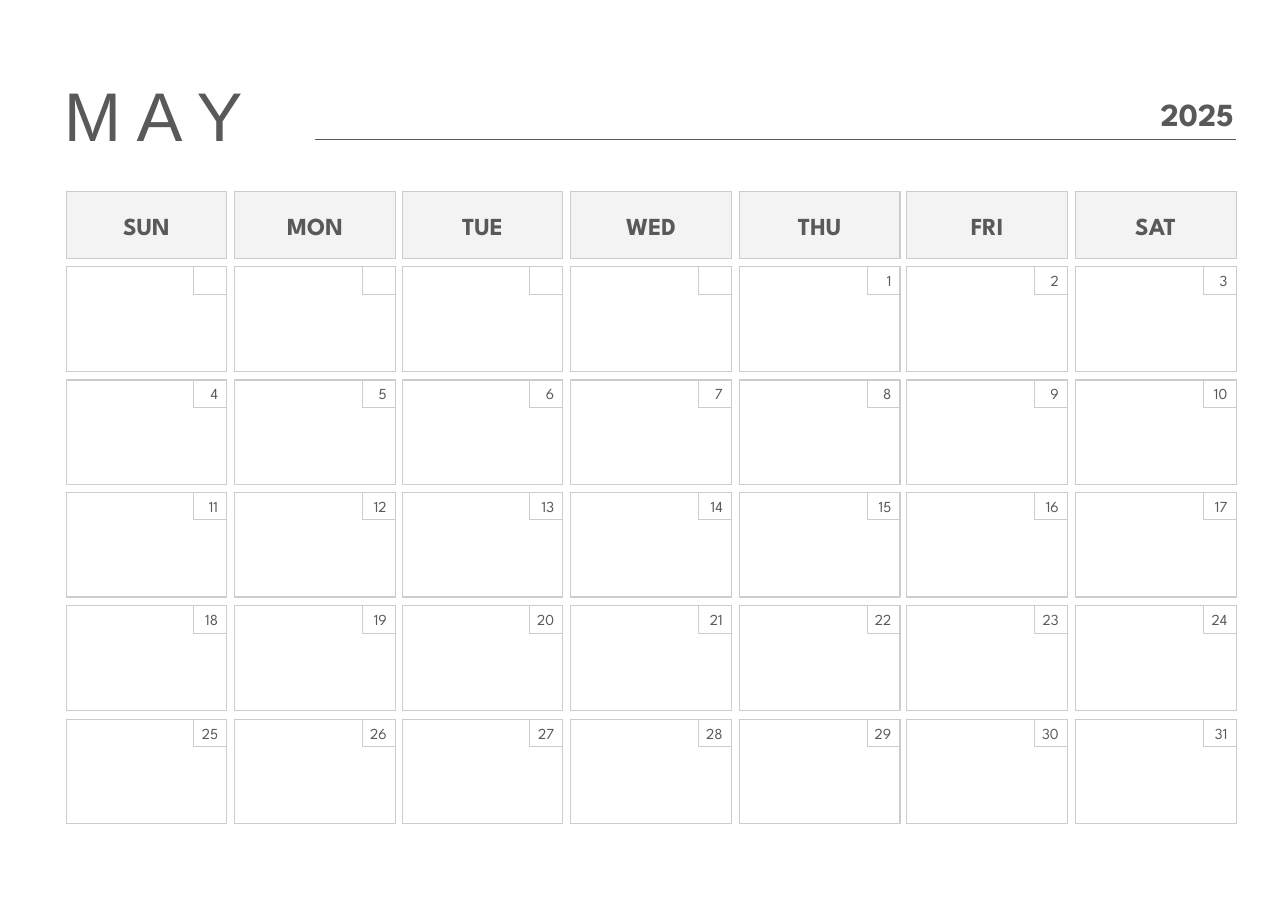
"""Build a one-page calendar for May 2025."""
from lxml.etree import SubElement
from pptx import Presentation
from pptx.dml.color import RGBColor
from pptx.enum.shapes import MSO_CONNECTOR as Link, MSO_SHAPE as Kind
from pptx.enum.text import MSO_ANCHOR as Anchor, MSO_AUTO_SIZE as Fit, PP_ALIGN as Align
from pptx.oxml.ns import qn
from pptx.util import Pt

PX = 9144
INK, EDGE, HEAD, PAPER = "595959", "CCCCCC", "F3F3F3", "FFFFFF"


def tint(code):
    return RGBColor.from_string(code)


def box(home, text, x, y, w, h, kind=Kind.RECTANGLE, fill=None, line=EDGE,
        size=10, bold=False, font="League Spartan", align=Align.RIGHT,
        anchor=Anchor.MIDDLE, pad=(0, 0, 0, 0), grow=False):
    item = home.add_shape(kind, x * PX, y * PX, w * PX, h * PX)
    item.shadow.inherit = False
    if fill:
        item.fill.solid()
        item.fill.fore_color.rgb = tint(fill)
    else:
        item.fill.background()
    if line:
        item.line.color.rgb = tint(line)
        item.line.width = Pt(0.75)
    else:
        item.line.fill.background()
    if not text:
        return
    frame = item.text_frame
    frame.word_wrap = True
    frame.auto_size = Fit.SHAPE_TO_FIT_TEXT if grow else Fit.NONE
    frame.vertical_anchor = anchor
    frame.margin_left, frame.margin_top, frame.margin_right, frame.margin_bottom = [
        side * PX for side in pad]
    para = frame.paragraphs[0]
    para.alignment = align
    run = para.add_run()
    run.text = text
    run.font.name = font
    run.font.size = Pt(size)
    run.font.bold = bold
    run.font.color.rgb = tint(INK)


deck = Presentation()
deck.slide_width, deck.slide_height = 1169 * PX, 827 * PX
slide = deck.slides.add_slide(deck.slide_layouts[6])
shapes = slide.shapes

box(shapes, "M A Y", 58, 66, 234, 76, line=None, size=45, font="Arial",
    align=Align.LEFT, anchor=Anchor.TOP, grow=True)
box(shapes, "2025", 1000, 79, 122, 48, kind=Kind.ROUNDED_RECTANGLE, line=None,
    size=21, bold=True)

WIDE, TALL = 146, 95
TAB_W, TAB_H = 30, 25
cols = [60 + round(916 * col / 6) for col in range(7)]
rows = [242 + round(102.7 * row) for row in range(5)]
grid = shapes.add_group_shape().shapes
tabs = shapes.add_group_shape().shapes

for x, name in zip(cols, "SUN MON TUE WED THU FRI SAT".split()):
    box(grid, name, x, 174, WIDE, 61, fill=HEAD, size=16, bold=True,
        align=Align.CENTER, pad=(10, 10, 10, 10))

START = 4
for row, y in enumerate(rows):
    for col, x in enumerate(cols):
        day = row * 7 + col - START + 1
        box(grid, "", x, y, WIDE, TALL, fill=PAPER)
        box(tabs, str(day) if day > 0 else "", x + WIDE - TAB_W, y, TAB_W, TAB_H,
            pad=(0, 4, 8, 4), grow=True)

rule = shapes.add_connector(Link.STRAIGHT, 286 * PX, 127 * PX, 1122 * PX, 127 * PX)
rule.line.color.rgb = tint(INK)
rule.line.width = Pt(0.75)
SubElement(rule.element.spPr, qn("a:effectLst"))

deck.save("out.pptx")
